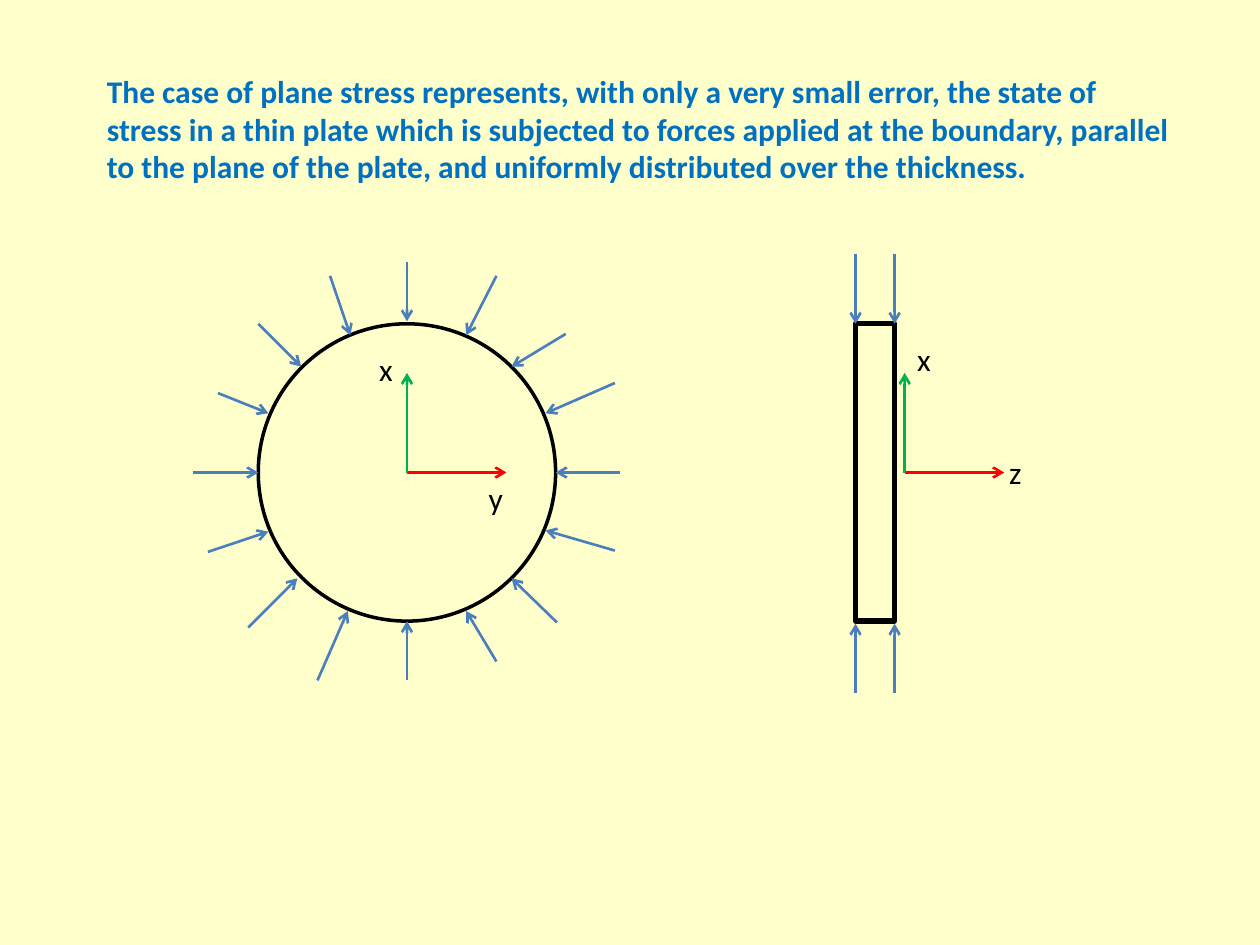
import pptx
import pptx.dml.color
import pptx.enum.shapes
import pptx.enum.text
import pptx.oxml.ns
import pptx.util
import lxml.etree

Inches = pptx.util.Inches
FONT = "Calibri"
FORCE, RED, GREEN, BLACK = "4B7EBC", "FF0000", "00B050", "000000"
STATEMENT = (
    "The case of plane stress represents, with only a very small error, the state of "
    "stress in a thin plate which is subjected to forces applied at the boundary, parallel "
    "to the plane of the plate, and uniformly distributed over the thickness."
)
CENTER_Y, RADIUS, AXIS = 3.75, 1.18, 0.79
DISC_X = 3.23
EDGE_LEFT, EDGE_RIGHT = 6.79, 7.1

# Outer end and tip of each boundary force, clockwise from the top
DISC_FORCES = [
    ((3.23, 2.08), (3.23, 2.55)),
    ((3.94, 2.19), (3.7, 2.66)),
    ((4.49, 2.65), (4.06, 2.91)),
    ((4.88, 3.04), (4.33, 3.28)),
    ((4.92, 3.75), (4.41, 3.75)),
    ((4.88, 4.37), (4.33, 4.21)),
    ((4.42, 4.94), (4.06, 4.59)),
    ((3.94, 5.25), (3.7, 4.85)),
    ((3.23, 5.4), (3.23, 4.93)),
    ((2.52, 5.4), (2.76, 4.85)),
    ((1.97, 4.98), (2.36, 4.59)),
    ((1.65, 4.38), (2.13, 4.22)),
    ((1.53, 3.75), (2.05, 3.75)),
    ((1.73, 3.12), (2.13, 3.28)),
    ((2.05, 2.57), (2.39, 2.91)),
    ((2.62, 2.19), (2.78, 2.66)),
]


def color(value):
    return pptx.dml.color.RGBColor.from_string(value)


def add_text(shapes, text, left, top, width, height, hue=BLACK, bold=False):
    box = shapes.add_textbox(Inches(left), Inches(top), Inches(width), Inches(height))
    frame = box.text_frame
    frame.word_wrap = True
    frame.auto_size = pptx.enum.text.MSO_AUTO_SIZE.SHAPE_TO_FIT_TEXT
    span = frame.paragraphs[0].add_run()
    span.text = text
    span.font.name = FONT
    span.font.size = pptx.util.Pt(18)
    span.font.bold = bold
    span.font.color.rgb = color(hue)


def add_label(shapes, text, left, top):
    add_text(shapes, text, left, top, 0.31, 0.4)


def add_outline(shapes, kind, left, top, width, height, weight):
    shape = shapes.add_shape(kind, Inches(left), Inches(top), Inches(width), Inches(height))
    shape.shadow.inherit = False
    shape.fill.background()
    shape.line.color.rgb = color(BLACK)
    shape.line.width = pptx.util.Pt(weight)


def add_arrow(shapes, start, tip, hue=FORCE):
    arrow = shapes.add_connector(
        pptx.enum.shapes.MSO_CONNECTOR.STRAIGHT,
        *(Inches(value) for value in (*start, *tip)),
    )
    arrow.line.color.rgb = color(hue)
    arrow.line.width = pptx.util.Pt(1.5)
    # Open arrowhead at the tip, and no shadow
    properties = arrow._element.spPr
    line = properties.find(pptx.oxml.ns.qn("a:ln"))
    lxml.etree.SubElement(line, pptx.oxml.ns.qn("a:tailEnd"), type="arrow")
    lxml.etree.SubElement(properties, pptx.oxml.ns.qn("a:effectLst"))


def add_axes(shapes, x):
    origin = (x, CENTER_Y)
    add_arrow(shapes, origin, (x + AXIS, CENTER_Y), RED)
    add_arrow(shapes, origin, (x, CENTER_Y - AXIS), GREEN)


def add_front_view(page):
    shapes = page.shapes.add_group_shape().shapes
    add_outline(shapes, pptx.enum.shapes.MSO_SHAPE.OVAL, DISC_X - RADIUS,
                CENTER_Y - RADIUS, 2 * RADIUS, 2 * RADIUS, 2)
    for start, tip in DISC_FORCES:
        add_arrow(shapes, start, tip)
    add_axes(shapes, DISC_X)
    add_label(shapes, "y", 3.78, 3.75)
    add_label(shapes, "x", 2.91, 2.73)


def add_side_view(page):
    shapes = page.shapes.add_group_shape().shapes
    add_outline(shapes, pptx.enum.shapes.MSO_SHAPE.RECTANGLE, EDGE_LEFT,
                CENTER_Y - RADIUS, EDGE_RIGHT - EDGE_LEFT, 2 * RADIUS, 3)
    for x in (EDGE_LEFT, EDGE_RIGHT):
        add_arrow(shapes, (x, 2.02), (x, 2.57))
        add_arrow(shapes, (x, 5.5), (x, 4.95))
    add_axes(shapes, 7.18)
    add_label(shapes, "z", 7.91, 3.55)
    add_label(shapes, "x", 7.18, 2.65)


def main():
    deck = pptx.Presentation()
    deck.slide_width, deck.slide_height = Inches(10), Inches(7.5)
    page = deck.slides.add_slide(deck.slide_layouts[6])
    page.background.fill.solid()
    page.background.fill.fore_color.rgb = color("FFFFCC")
    add_text(page.shapes, STATEMENT, 0.75, 0.52, 8.66, 1.01, "0070C0", bold=True)
    add_front_view(page)
    add_side_view(page)
    deck.save("out.pptx")


if __name__ == "__main__":
    main()
